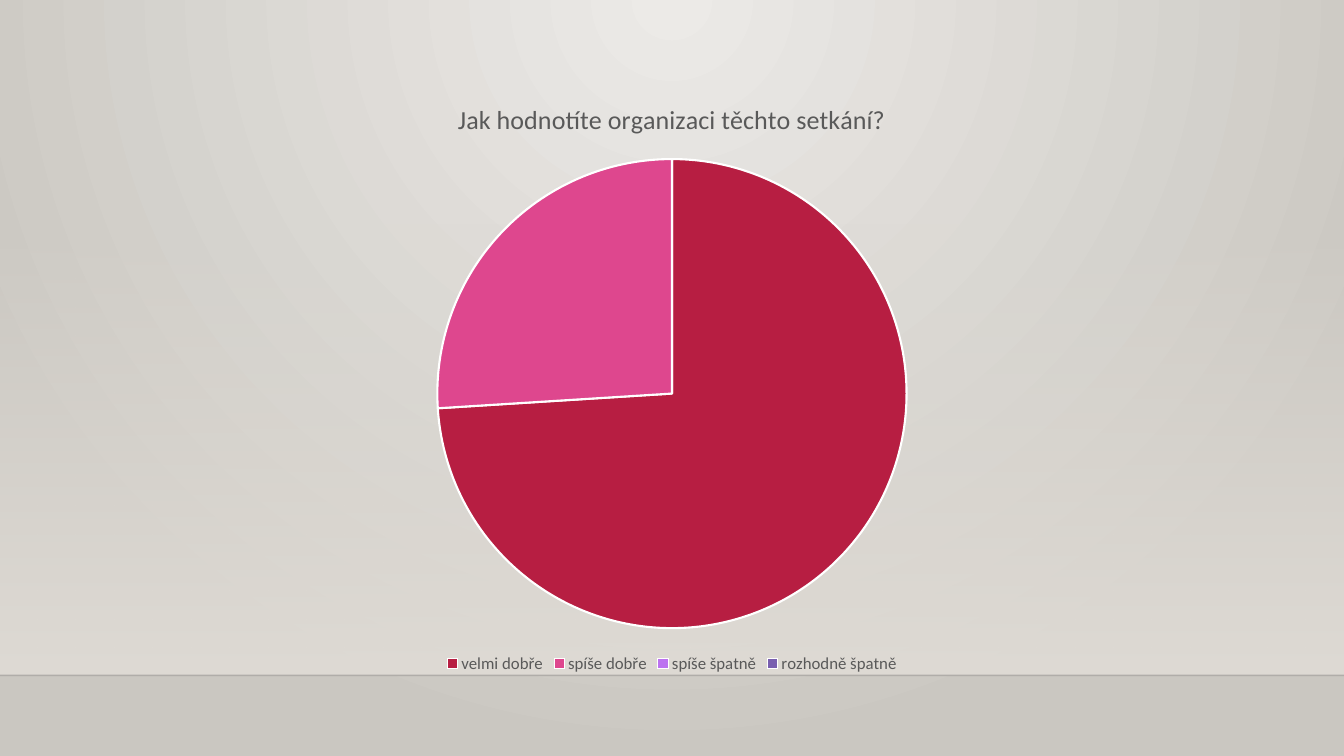
import pptx
import pptx.chart.data
import pptx.dml.color
import pptx.enum.chart
import pptx.enum.shapes
import pptx.oxml
import pptx.oxml.ns
import pptx.util

WIDTH = pptx.util.Inches(13.33)
HEIGHT = pptx.util.Inches(7.5)
FLOOR = 6.7 / 7.5  # height of the floor line as a share of the slide
FONT = "Calibri"
COLORS = {
    "glow": "ECEAE7",
    "edge": "CAC7C1",
    "wall": "DFDBD5",
    "floor line": "000001",
    "text": "595959",
    "border": "FFFFFF",
}
QUESTION = "Jak hodnotíte organizaci těchto setkání?"
ANSWERS = [  # answer, share in percent, slice colour
    ("velmi dobře", 74, "B71E42"),
    ("spíše dobře", 26, "DE478E"),
    ("spíše špatně", 0, "BC72F0"),
    ("rozhodně špatně", 0, "795FAF"),
]
RADIAL = '<a:path path="circle"><a:fillToRect l="43000" r="43000" b="100000"/></a:path>'
DOWNWARD = '<a:lin ang="5400000" scaled="0"/>'


def rgb(value):
    return pptx.dml.color.RGBColor.from_string(value)


def format_font(font, size):
    font.name = FONT
    font.size = pptx.util.Pt(size)
    font.bold = False
    font.color.rgb = rgb(COLORS["text"])


def set_gradient(owner, fill, start, end, direction, start_opacity=100):
    """Fill a background or shape with two colour stops."""
    fill.gradient()
    gradient = next(owner.element.iter(pptx.oxml.ns.qn("a:gradFill")))
    replacement = pptx.oxml.parse_xml(
        f'<a:gradFill {pptx.oxml.ns.nsdecls("a")} rotWithShape="1"><a:gsLst>'
        f'<a:gs pos="0"><a:srgbClr val="{start}">'
        f'<a:alpha val="{start_opacity * 1000}"/></a:srgbClr></a:gs>'
        f'<a:gs pos="100000"><a:srgbClr val="{end}"/></a:gs>'
        f"</a:gsLst>{direction}</a:gradFill>"
    )
    gradient.getparent().replace(gradient, replacement)


def add_wall(slide, top, bottom):
    shape = slide.shapes.add_shape(
        pptx.enum.shapes.MSO_SHAPE.RECTANGLE,
        0, int(HEIGHT * top), WIDTH, int(HEIGHT * (bottom - top)),
    )
    shape.shadow.inherit = False
    shape.line.fill.background()
    set_gradient(shape, shape.fill, COLORS["wall"], COLORS["wall"], DOWNWARD, start_opacity=0)


def add_floor_line(slide, top, opacity):
    y = int(HEIGHT * top)
    connector = slide.shapes.add_connector(
        pptx.enum.shapes.MSO_CONNECTOR.STRAIGHT, 0, y, WIDTH, y
    )
    connector.line.width = pptx.util.Pt(1)
    connector.line.color.rgb = rgb(COLORS["floor line"])
    color = next(connector.element.iter(pptx.oxml.ns.qn("a:srgbClr")))
    alpha = pptx.oxml.parse_xml(
        f'<a:alpha {pptx.oxml.ns.nsdecls("a")} val="{opacity * 1000}"/>'
    )
    color.append(alpha)
    effects = pptx.oxml.parse_xml(f'<a:effectLst {pptx.oxml.ns.nsdecls("a")}/>')
    connector.element.spPr.append(effects)


def add_pie(slide, left, top, width, height):
    data = pptx.chart.data.CategoryChartData()
    data.categories = [answer for answer, _, _ in ANSWERS]
    data.add_series(QUESTION, [share for _, share, _ in ANSWERS])
    chart = slide.shapes.add_chart(
        pptx.enum.chart.XL_CHART_TYPE.PIE,
        int(WIDTH * left), int(HEIGHT * top), int(WIDTH * width), int(HEIGHT * height), data,
    ).chart
    format_font(chart.font, 10)

    # Title and legend
    chart.has_title = True
    title = chart.chart_title
    title.include_in_layout = False
    title.text_frame.text = QUESTION
    format_font(title.text_frame.paragraphs[0].runs[0].font, 18.6)
    chart.has_legend = True
    chart.legend.position = pptx.enum.chart.XL_LEGEND_POSITION.BOTTOM
    chart.legend.include_in_layout = False
    format_font(chart.legend.font, 12)

    # Slices
    plot = chart.plots[0]
    plot.vary_by_categories = True
    for index, (_, _, color) in enumerate(ANSWERS):
        slice_format = plot.series[0].points[index].format
        slice_format.fill.solid()
        slice_format.fill.fore_color.rgb = rgb(color)
        slice_format.line.color.rgb = rgb(COLORS["border"])
        slice_format.line.width = pptx.util.Pt(1.5)


def main():
    presentation = pptx.Presentation()
    presentation.slide_width = WIDTH
    presentation.slide_height = HEIGHT
    slide = presentation.slides.add_slide(presentation.slide_layouts[6])

    # Backdrop
    background = slide.background.fill
    set_gradient(slide, background, COLORS["glow"], COLORS["edge"], RADIAL)
    add_wall(slide, top=2.21 / 7.5, bottom=FLOOR)
    add_floor_line(slide, top=FLOOR, opacity=20)

    # Survey result, centred across two thirds of the width
    add_pie(slide, left=1 / 6, top=0.79 / 7.5, width=2 / 3, height=5.93 / 7.5)
    presentation.save("out.pptx")


if __name__ == "__main__":
    main()
